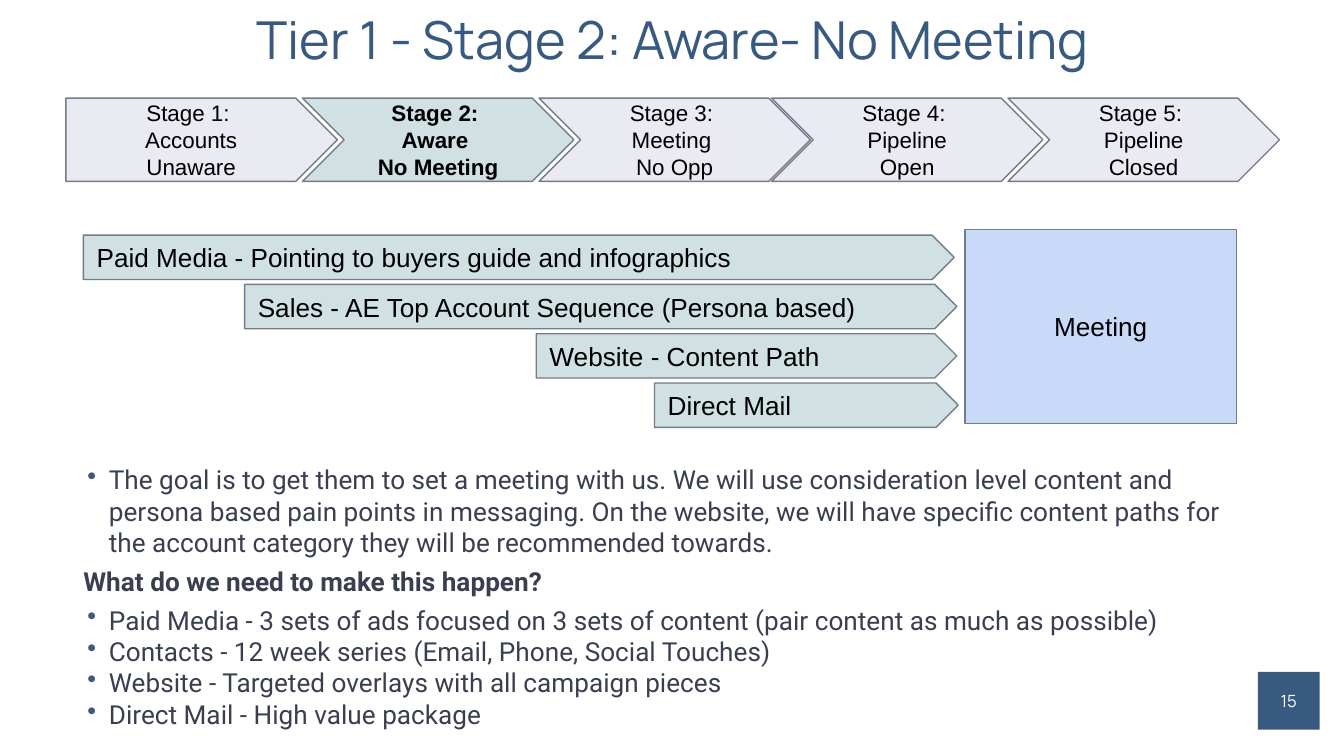
"""Build the Tier 1 - Stage 2 campaign slide."""
from lxml.etree import SubElement
from pptx import Presentation
from pptx.dml.color import RGBColor
from pptx.enum.shapes import MSO_SHAPE as Shape
from pptx.enum.text import MSO_ANCHOR as Anchor, PP_ALIGN as Align
from pptx.oxml.ns import qn
from pptx.util import Pt

NAVY = RGBColor(0x39, 0x5A, 0x80)
SLATE = RGBColor(0x3A, 0x3F, 0x50)
OUTLINE = RGBColor(0x75, 0x7B, 0x89)
LAVENDER = RGBColor(0xE9, 0xEA, 0xF2)
TEAL = RGBColor(0xD0, 0xE0, 0xE3)
SKY = RGBColor(0xC9, 0xDA, 0xF8)
BLACK = RGBColor(0, 0, 0)
WHITE = RGBColor(255, 255, 255)

TITLE = "Tier 1 - Stage 2: Aware- No Meeting"
PAGE = "15"
OUTCOME = "Meeting"
CURRENT_STAGE = 1
STAGES = [
    (49, ["Stage 1: ", "Accounts", "Unaware"]),
    (225, ["Stage 2: ", "Aware ", "No Meeting"]),
    (401, ["Stage 3: ", "Meeting ", "No Opp"]),
    (574, ["Stage 4: ", "Pipeline", "Open"]),
    (750, ["Stage 5: ", "Pipeline", "Closed"]),
]
CHANNELS = [
    (62, 648, "Paid Media - Pointing to buyers guide and infographics"),
    (182, 530, "Sales - AE Top Account Sequence (Persona based)"),
    (399, 313, "Website - Content Path"),
    (487, 226, "Direct Mail"),
]
GOAL = (
    "The goal is to get them to set a meeting with us. We will use consideration level "
    "content and persona based pain points in messaging. On the website, we will have "
    "specific content paths for the account category they will be recommended towards."
)
NOTES = [
    (GOAL, True, 0),
    ("What do we need to make this happen?", False, 4),
    ("Paid Media - 3 sets of ads focused on 3 sets of content (pair content as much as possible)", True, 4),
    ("Contacts - 12 week series (Email, Phone, Social Touches)", True, 0),
    ("Website - Targeted overlays with all campaign pieces", True, 0),
    ("Direct Mail - High value package", True, 0),
]

SCALE = 9144
STAGE_TOP, STAGE_WIDTH, STAGE_HEIGHT = 73, 202, 62
CHANNEL_TOP, CHANNEL_PITCH, CHANNEL_HEIGHT = 175, 36.67, 33


def px(length):
    return round(length * SCALE)


def box(*lengths):
    return [px(length) for length in lengths]


def set_frame(frame, inset, anchor):
    frame.word_wrap = True
    frame.vertical_anchor = anchor
    frame.margin_left = frame.margin_right = px(inset)
    frame.margin_top = frame.margin_bottom = px(inset)


def add_run(paragraph, text, font_name, size, color, bold=False):
    run = paragraph.add_run()
    run.text = text
    run.font.name, run.font.size, run.font.bold = font_name, Pt(size), bold
    run.font.color.rgb = color


def next_paragraph(frame, index):
    return frame.add_paragraph() if index else frame.paragraphs[0]


def add_block(slide, preset, bounds, fill, lines, size=14, align=Align.CENTER, bold=False,
              font_name="Arial", color=BLACK, outline=OUTLINE, inset=10):
    block = slide.shapes.add_shape(preset, *box(*bounds))
    block.shadow.inherit = False
    block.fill.solid()
    block.fill.fore_color.rgb = fill
    if outline is None:
        block.line.fill.background()
    else:
        block.line.color.rgb = outline
        block.line.width = Pt(0.75)
    set_frame(block.text_frame, inset, Anchor.MIDDLE)
    for index, line in enumerate(lines):
        paragraph = next_paragraph(block.text_frame, index)
        paragraph.alignment = align
        add_run(paragraph, line, font_name, size, color, bold)


def add_bullet(paragraph):
    properties = paragraph._p.get_or_add_pPr()
    properties.set("marL", str(px(19)))
    properties.set("indent", str(px(-16)))
    bullet_color = SubElement(properties, qn("a:buClr"))
    SubElement(bullet_color, qn("a:srgbClr"), val=str(NAVY))
    SubElement(properties, qn("a:buChar"), char="•")


def add_title(slide):
    title = slide.shapes.title
    title.left, title.top, title.width, title.height = box(63, 11, 875, 42)
    set_frame(title.text_frame, 0, Anchor.MIDDLE)
    heading = title.text_frame.paragraphs[0]
    heading.alignment = Align.CENTER
    heading.line_spacing = 0.9
    add_run(heading, TITLE, "Manrope", 28, NAVY)


def add_notes(slide):
    frame = slide.shapes.add_textbox(*box(62, 345, 875, 203)).text_frame
    set_frame(frame, 0, Anchor.TOP)
    for index, (text, bulleted, space) in enumerate(NOTES):
        paragraph = next_paragraph(frame, index)
        if bulleted:
            add_bullet(paragraph)
        paragraph.space_before = Pt(space)
        add_run(paragraph, text, "Roboto", 14, SLATE, bold=not bulleted)


def main():
    deck = Presentation()
    deck.slide_width, deck.slide_height = box(1000, 562.5)
    slide = deck.slides.add_slide(deck.slide_layouts[5])
    add_title(slide)
    add_notes(slide)
    add_block(slide, Shape.RECTANGLE, (936, 500, 46, 43), NAVY, [PAGE], size=9,
              font_name="Manrope", color=WHITE, outline=None, inset=0)
    for index, (left, lines) in enumerate(STAGES):
        current = index == CURRENT_STAGE
        add_block(slide, Shape.CHEVRON if index else Shape.PENTAGON,
                  (left, STAGE_TOP, STAGE_WIDTH, STAGE_HEIGHT),
                  TEAL if current else LAVENDER, lines, size=12, bold=current)
    for index, (left, width, channel) in enumerate(CHANNELS):
        top = CHANNEL_TOP + index * CHANNEL_PITCH
        add_block(slide, Shape.PENTAGON, (left, top, width, CHANNEL_HEIGHT),
                  TEAL, [channel], align=Align.LEFT)
    add_block(slide, Shape.RECTANGLE, (718, 171, 202, 144), SKY, [OUTCOME])
    deck.save("out.pptx")


if __name__ == "__main__":
    main()
